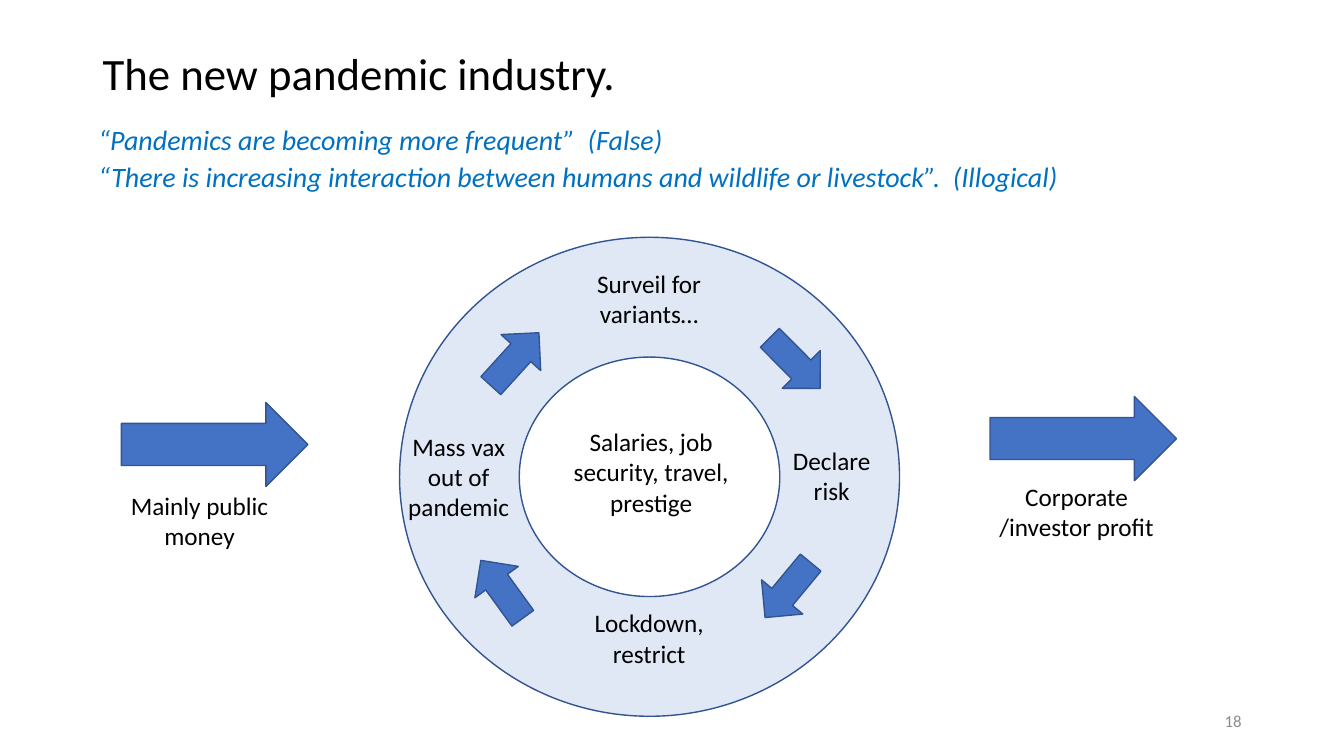
from lxml import etree
from pptx import Presentation
from pptx.dml.color import RGBColor
from pptx.enum.shapes import MSO_SHAPE
from pptx.enum.text import MSO_ANCHOR, MSO_AUTO_SIZE, PP_ALIGN
from pptx.oxml.ns import qn
from pptx.util import Cm, Pt

DONUT, DOWN_ARROW = MSO_SHAPE.DONUT, MSO_SHAPE.DOWN_ARROW
LEFT, CENTER, RIGHT = PP_ALIGN.LEFT, PP_ALIGN.CENTER, PP_ALIGN.RIGHT
TOP, MIDDLE = MSO_ANCHOR.TOP, MSO_ANCHOR.MIDDLE
NO_FIT = MSO_AUTO_SIZE.NONE
COLORS = {"text": "000000", "quote": "0070C0", "fill": "4472C4",
          "line": "325491", "number": "8C8C8C"}


class Deck:
    """Holds the shared style and the current slide."""

    def __init__(self, prs, font):
        self.font = font
        self.s = prs.slides.add_slide(prs.slide_layouts[5])

    def color(self, name):
        return RGBColor.from_string(COLORS[name])

    def fill_text(self, sp, lines, size, color="text", align=CENTER, anchor=TOP,
                  italic=False, para=None):
        tf = sp.text_frame
        frame = {"word_wrap": True, "auto_size": NO_FIT, "vertical_anchor": anchor}
        for key, value in frame.items():
            setattr(tf, key, value)
        for i, line in enumerate(lines):
            p = tf.add_paragraph() if i else tf.paragraphs[0]
            for key, value in {"alignment": align, **(para or {})}.items():
                setattr(p, key, value)
            r = p.add_run()
            r.text = line
            style = {"name": self.font, "size": Pt(size), "italic": italic, "bold": False}
            for key, value in style.items():
                setattr(r.font, key, value)
            r.font.color.rgb = self.color(color)

    def title(self, text, box, size):
        sp = self.s.shapes.title
        for key, value in zip(("left", "top", "width", "height"), box):
            setattr(sp, key, Cm(value))
        self.fill_text(sp, [text], size, align=LEFT, anchor=MIDDLE,
                       para={"line_spacing": 0.9})

    def text(self, lines, box, size=18, **style):
        sp = self.s.shapes.add_textbox(*map(Cm, box))
        self.fill_text(sp, lines, size, **style)

    def shape(self, kind, box, rotation=0, alpha=None):
        sp = self.s.shapes.add_shape(kind, *map(Cm, box))
        sp.shadow.inherit = False
        sp.rotation = rotation
        sp.fill.solid()
        sp.fill.fore_color.rgb = self.color("fill")
        if alpha is not None:
            clr = sp.element.spPr.find(qn("a:solidFill")).find(qn("a:srgbClr"))
            etree.SubElement(clr, qn("a:alpha")).set("val", str(alpha * 1000))
        sp.line.color.rgb = self.color("line")
        sp.line.width = Pt(1)


def main():
    prs = Presentation()
    prs.slide_width, prs.slide_height = Cm(33.87), Cm(19.05)
    deck = Deck(prs, "Calibri")

    deck.title("The new pandemic industry.", (2.33, 1.01, 29.21, 1.8), 32)
    deck.text(["“Pandemics are becoming more frequent”  (False)",
               "“There is increasing interaction between humans and wildlife or "
               "livestock”.  (Illogical)"],
              (2.23, 3.05, 30.59, 2.2), 20, color="quote", align=LEFT, italic=True,
              para={"line_spacing": 0.9, "space_before": Pt(5)})

    deck.shape(DONUT, (10.07, 5.98, 12.6, 12.07), alpha=16)
    two_lines, three_lines = 1.8, 2.57
    labels = [
        ("Surveil for variants…", 14.1, 6.63, 4.52, two_lines),
        ("Declare risk", 19.36, 11.1, 3.2, two_lines),
        ("Lockdown, restrict", 14.1, 15.19, 4.52, two_lines),
        ("Mass vax out of pandemic", 9.63, 10.74, 3.86, three_lines),
        ("Salaries, job security, travel, prestige", 14.15, 10.62, 4.52, three_lines),
        ("Mainly public money", 2.77, 12.22, 4.52, two_lines),
        ("Corporate /investor profit", 24.87, 12.01, 4.52, two_lines),
    ]
    for text, *box in labels:
        deck.text([text], box)

    cycle_arrows = [(19.36, 8.25, 315.2), (12.3, 8.15, 222.3),
                    (11.97, 13.95, 144.1), (19.18, 13.97, 39.7)]
    for left, top, rotation in cycle_arrows:
        deck.shape(DOWN_ARROW, (left, top, 1.35, 1.8), rotation)
    for left, top in [(4.35, 8.85), (26.24, 8.7)]:
        deck.shape(DOWN_ARROW, (left, top, 2.12, 4.7), 270)

    deck.text(["18"], (23.92, 17.66, 7.62, 1.01), 12, color="number",
              align=RIGHT, anchor=MIDDLE)
    prs.save("out.pptx")


if __name__ == "__main__":
    main()
